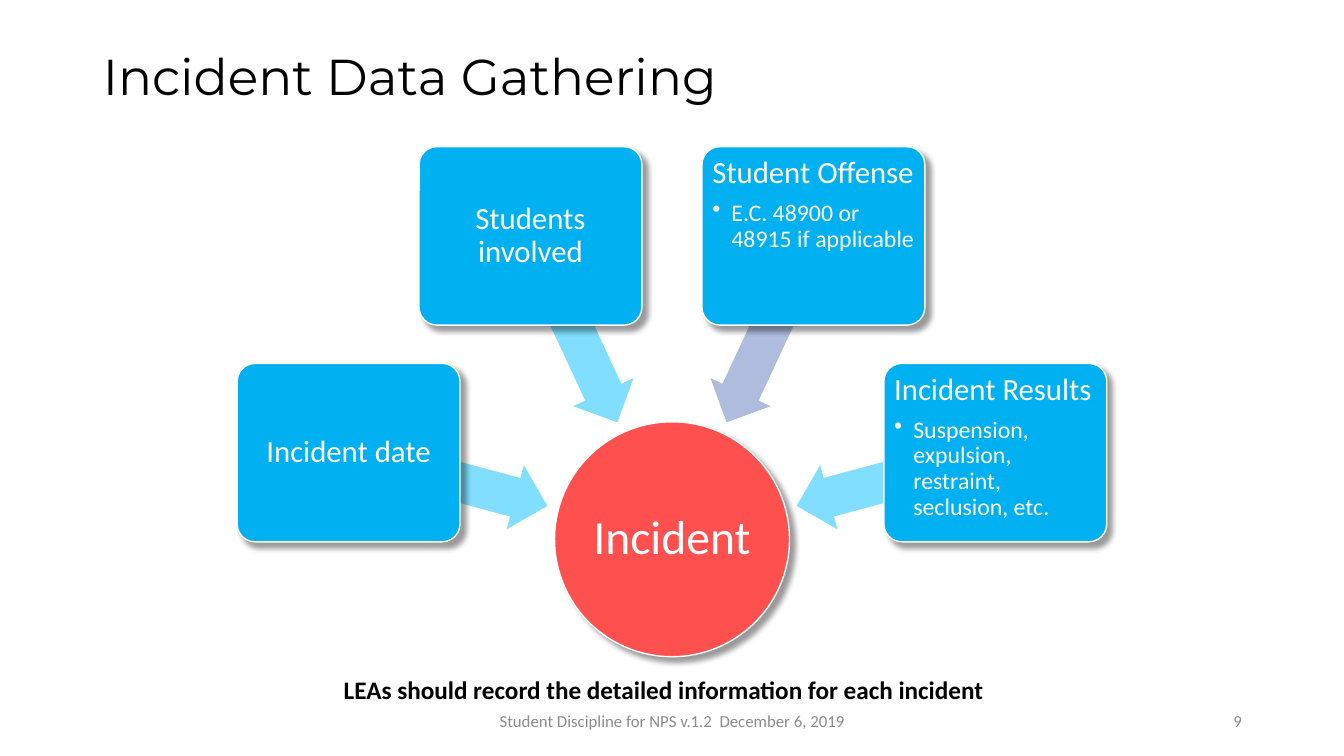
from dataclasses import dataclass
from math import cos, radians, sin

from lxml.etree import SubElement
from pptx import Presentation
from pptx.dml.color import RGBColor
from pptx.enum.shapes import MSO_SHAPE
from pptx.enum.text import MSO_ANCHOR, PP_ALIGN
from pptx.oxml.ns import qn
from pptx.shapes.autoshape import Shape
from pptx.slide import Slide
from pptx.text.text import _Paragraph
from pptx.util import Emu, Inches, Pt

COLORS = {
    "text": "000000", "white": "FFFFFF", "muted": "8C8C8C", "shadow": "000000",
    "hub": "FF5050", "card": "00B0F0", "arrow": "81DEFF", "arrow_alt": "B0BCDE",
}
BODY_FONT, TITLE_FONT = "Calibri", "Montserrat"
SLIDE_W, SLIDE_H = Inches(13.33), Inches(7.5)

# Radial diagram, in percent of the slide height
HUB_Y, HUB_SIZE = 71.33, 31.07
ARROW_ORBIT, ARROW_W, ARROW_H = 30.67, 27.2, 8.8
CARD_ORBIT, CARD_W, CARD_H = 44.27, 29.47, 23.6


@dataclass(frozen=True)
class Topic:
    angle: int
    heading: str
    detail: str = ""
    arrow: str = "arrow"


@dataclass(frozen=True)
class Label:
    """A line of text; its box is in percent of the slide's width and height."""
    words: str
    left: float
    top: float
    width: float
    height: float
    size: int
    color: str = "muted"
    bold: bool = False
    align: PP_ALIGN = PP_ALIGN.LEFT
    anchor: MSO_ANCHOR = MSO_ANCHOR.MIDDLE
    font: str = BODY_FONT


TOPICS = [
    Topic(195, "Incident date"),
    Topic(245, "Students involved"),
    Topic(295, "Student Offense", "E.C. 48900 or 48915 if applicable", "arrow_alt"),
    Topic(345, "Incident Results", "Suspension, expulsion, restraint, seclusion, etc."),
]
TITLE = Label("Incident Data Gathering", 6.9, 6.13, 86.25, 8.8, 36, "text",
              font=TITLE_FONT)
LABELS = [
    Label("LEAs should record the detailed information for each incident",
          24.83, 88.53, 58.8, 5.33, 18, "text", True, anchor=MSO_ANCHOR.TOP),
    Label("Student Discipline for NPS v.1.2  December 6, 2019",
          33.15, 92.67, 33.75, 5.33, 12, align=PP_ALIGN.CENTER),
    Label("9", 70.65, 92.67, 22.5, 5.33, 12, align=PP_ALIGN.RIGHT),
]


def across(percent: float) -> Emu:
    return Emu(round(SLIDE_W * percent / 100))


def down(percent: float) -> Emu:
    return Emu(round(SLIDE_H * percent / 100))


def style_runs(paragraph: _Paragraph, size: int, color: str,
               bold: bool = False, font: str = BODY_FONT) -> None:
    for run in paragraph.runs:
        run.font.name, run.font.size, run.font.bold = font, Pt(size), bold
        run.font.color.rgb = RGBColor.from_string(COLORS[color])


def write_label(holder: Shape, label: Label) -> None:
    frame = holder.text_frame
    frame.text, frame.word_wrap = label.words, True
    frame.vertical_anchor = label.anchor
    paragraph = frame.paragraphs[0]
    paragraph.alignment = label.align
    style_runs(paragraph, label.size, label.color, label.bold, label.font)


def label_box(label: Label) -> tuple[Emu, Emu, Emu, Emu]:
    return (across(label.left), down(label.top),
            across(label.width), down(label.height))


def add_orbiting(slide: Slide, preset: MSO_SHAPE, angle: float, orbit: float,
                 width: float, height: float, fill: str) -> Shape:
    """Centre a flat shape on a circle around the hub."""
    x = SLIDE_W / 2 + down(orbit) * cos(radians(angle))
    y = down(HUB_Y) + down(orbit) * sin(radians(angle))
    w, h = down(width), down(height)
    shape = slide.shapes.add_shape(preset, round(x - w / 2), round(y - h / 2), w, h)
    shape.shadow.inherit = False
    shape.fill.solid()
    shape.fill.fore_color.rgb = RGBColor.from_string(COLORS[fill])
    shape.line.fill.background()
    return shape


def raise_shape(shape: Shape) -> None:
    """Give a shape a white outline and a soft shadow to the lower right."""
    shape.line.color.rgb = RGBColor.from_string(COLORS["white"])
    shape.line.width = Pt(1)
    effects = shape._element.spPr.find(qn("a:effectLst"))
    shadow = SubElement(effects, qn("a:outerShdw"), blurRad=str(Pt(4)),
                        dist=str(Pt(5)), dir=str(45 * 60000),
                        algn="tl", rotWithShape="0")
    color = SubElement(shadow, qn("a:srgbClr"), val=COLORS["shadow"])
    SubElement(color, qn("a:alpha"), val="40000")


def write_block(shape: Shape, heading: str, detail: str, size: int,
                margin: float) -> None:
    """Centre a lone heading; set a heading with detail as a bulleted list."""
    frame = shape.text_frame
    frame.text, frame.word_wrap = heading, True
    frame.margin_left = frame.margin_right = Inches(margin)
    frame.margin_top = frame.margin_bottom = Inches(margin)
    frame.vertical_anchor = MSO_ANCHOR.TOP if detail else MSO_ANCHOR.MIDDLE
    first = frame.paragraphs[0]
    first.alignment = PP_ALIGN.LEFT if detail else PP_ALIGN.CENTER
    first.line_spacing, first.space_after = 0.9, Pt(size * 0.35)
    style_runs(first, size, "white")
    if detail:
        bullet = frame.add_paragraph()
        bullet.text, bullet.level = detail, 1
        bullet.alignment = PP_ALIGN.LEFT
        bullet.line_spacing, bullet.space_after = 0.9, Pt(17 * 0.15)
        style_runs(bullet, 17, "white")
        props = bullet._p.get_or_add_pPr()
        props.set("marL", str(Inches(0.19)))
        props.set("indent", str(-Inches(0.19)))
        SubElement(props, qn("a:buChar"), char="•")


def add_hub(slide: Slide) -> None:
    hub = add_orbiting(slide, MSO_SHAPE.OVAL, 0, 0, HUB_SIZE, HUB_SIZE, "hub")
    raise_shape(hub)
    write_block(hub, "Incident", "", 34, 0.02)


def add_topic(slide: Slide, topic: Topic) -> None:
    arrow = add_orbiting(slide, MSO_SHAPE.LEFT_ARROW, topic.angle, ARROW_ORBIT,
                         ARROW_W, ARROW_H, topic.arrow)
    arrow.adjustments[0], arrow.adjustments[1] = 0.6, 0.5
    arrow.rotation = topic.angle
    card = add_orbiting(slide, MSO_SHAPE.ROUNDED_RECTANGLE, topic.angle, CARD_ORBIT,
                        CARD_W, CARD_H, "card")
    card.adjustments[0] = 0.1
    raise_shape(card)
    write_block(card, topic.heading, topic.detail, 22, 0.05)


def main() -> None:
    deck = Presentation()
    deck.slide_width, deck.slide_height = SLIDE_W, SLIDE_H
    slide = deck.slides.add_slide(deck.slide_layouts[5])
    title = slide.shapes.title
    title.left, title.top, title.width, title.height = label_box(TITLE)
    write_label(title, TITLE)
    title.text_frame.paragraphs[0].line_spacing = 0.9
    add_hub(slide)
    for topic in TOPICS:
        add_topic(slide, topic)
    for label in LABELS:
        write_label(slide.shapes.add_textbox(*label_box(label)), label)
    deck.save("out.pptx")


if __name__ == "__main__":
    main()
